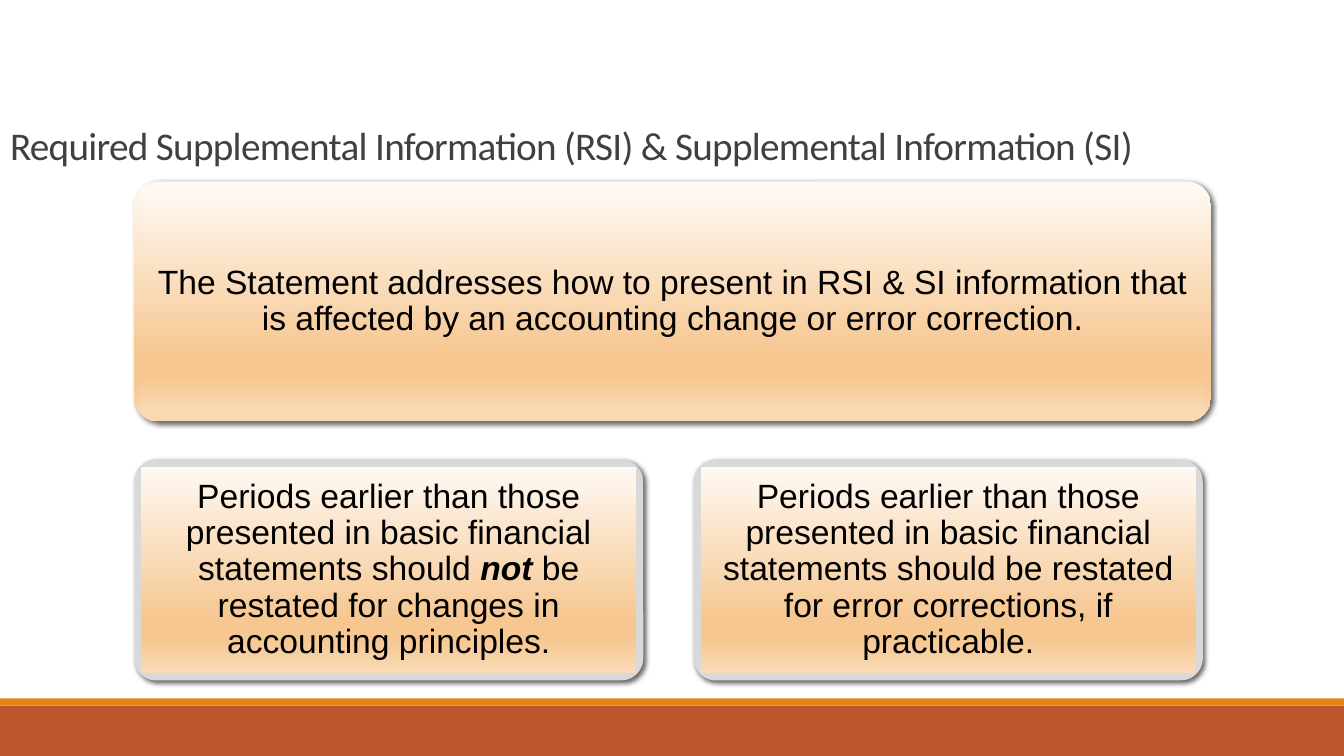
from pptx import Presentation
from pptx.dml.color import RGBColor
from pptx.enum.shapes import MSO_SHAPE
from pptx.enum.text import MSO_ANCHOR, MSO_AUTO_SIZE, PP_ALIGN
from pptx.oxml import parse_xml
from pptx.oxml.ns import nsdecls
from pptx.util import Inches, Pt

TITLE = "Required Supplemental Information (RSI) & Supplemental Information (SI)"
LEAD = [("The Statement addresses how to present in RSI & SI information "
         "that is affected by an accounting change or error correction.", False)]
RULES = [
    [("Periods earlier than those presented in basic financial statements should ", False),
     ("not ", True),
     ("be restated for changes in accounting principles.", False)],
    [("Periods earlier than those presented in basic financial statements "
      "should be restated for error corrections, if practicable.", False)],
]

WHITE = RGBColor(0xFF, 0xFF, 0xFF)
BLACK = RGBColor(0, 0, 0)
SLATE = RGBColor(0x40, 0x40, 0x40)
GREY = RGBColor(0xD9, 0xD9, 0xD9)
RUST = RGBColor(0xBD, 0x58, 0x2C)
AMBER = RGBColor(0xE4, 0x83, 0x12)
CREAM = RGBColor(0xFE, 0xF9, 0xF3)
PEACH = RGBColor(0xF6, 0xC7, 0x91)
SAND = RGBColor(0xF9, 0xDA, 0xB6)
GLOW = [(0, CREAM), (74, PEACH), (83, PEACH), (100, SAND)]

WIDTH, HEIGHT = 13.33, 7.5
FOOT, STRIPE = 0.5, 0.07
LEFT, RIM = 1.33, 0.07
LEAD_TOP, LEAD_W, LEAD_H = 1.8, 10.68, 2.38
RULE_TOP, RULE_W, RULE_H, RULE_STEP = 4.56, 5.05, 2.19, 5.55


def paint(fill, tint):
    """Fill with one colour, or from top to bottom with a list of stops."""
    if isinstance(tint, RGBColor):
        fill.solid()
        fill.fore_color.rgb = tint
        return
    fill.gradient()
    fill.gradient_angle = 270
    stops = fill._xPr.find(".//{*}gsLst")
    for stop in list(stops):
        stops.remove(stop)
    for share, color in tint:
        stops.append(parse_xml(
            f'<a:gs {nsdecls("a")} pos="{share * 1000}">'
            f'<a:srgbClr val="{color}"/></a:gs>'))


def block(shapes, kind, x, y, w, h, tint):
    shape = shapes.add_shape(kind, Inches(x), Inches(y), Inches(w), Inches(h))
    paint(shape.fill, tint)
    shape.line.fill.background()
    shape.shadow.inherit = False
    return shape


def cast(shape):
    """Drop a soft shadow to the lower right."""
    shape._element.spPr.find("{*}effectLst").append(parse_xml(
        f'<a:outerShdw {nsdecls("a")} blurRad="{Pt(3.5)}" dist="{Pt(2)}" '
        'dir="2700000" algn="tl" rotWithShape="0"><a:srgbClr val="000000">'
        '<a:alpha val="60000"/></a:srgbClr></a:outerShdw>'))


def card(slide, x, y, w, h, rim, parts):
    shapes = slide.shapes.add_group_shape().shapes
    frame = block(shapes, MSO_SHAPE.ROUNDED_RECTANGLE, x, y, w, h, rim)
    frame.adjustments[0] = 0.1
    cast(frame)
    face = block(shapes, MSO_SHAPE.RECTANGLE, x + RIM, y + RIM,
                 w - 2 * RIM, h - 2 * RIM, GLOW)
    text = face.text_frame
    text.word_wrap = True
    text.vertical_anchor = MSO_ANCHOR.MIDDLE
    text.margin_left = text.margin_right = Inches(0.1)
    text.margin_top = text.margin_bottom = Inches(0.1)
    para = text.paragraphs[0]
    para.alignment = PP_ALIGN.CENTER
    para.line_spacing = 0.9
    for words, strong in parts:
        run = para.add_run()
        run.text = words
        font = run.font
        font.name, font.size = "Arial", Pt(24)
        font.bold = font.italic = strong
        font.color.rgb = BLACK


def head(slide):
    title = slide.shapes.title
    title.left = title.top = 0
    title.width, title.height = Inches(12.29), Inches(1.72)
    text = title.text_frame
    text.text = TITLE
    text.word_wrap = True
    text.auto_size = MSO_AUTO_SIZE.NONE
    text.vertical_anchor = MSO_ANCHOR.BOTTOM
    para = text.paragraphs[0]
    para.alignment = PP_ALIGN.LEFT
    para.line_spacing = 0.85
    run = para.runs[0]
    run.font.name, run.font.size = "Calibri", Pt(28)
    run.font.color.rgb = SLATE
    run.font._element.set("spc", "-50")


def main():
    deck = Presentation()
    deck.slide_width, deck.slide_height = Inches(WIDTH), Inches(HEIGHT)
    slide = deck.slides.add_slide(deck.slide_layouts[5])
    paint(slide.background.fill, WHITE)
    head(slide)
    base = HEIGHT - FOOT
    block(slide.shapes, MSO_SHAPE.RECTANGLE, 0, base, WIDTH, FOOT, RUST)
    block(slide.shapes, MSO_SHAPE.RECTANGLE, 0, base - STRIPE, WIDTH, STRIPE, AMBER)
    card(slide, LEFT, LEAD_TOP, LEAD_W, LEAD_H, GLOW, LEAD)
    for col, parts in enumerate(RULES):
        card(slide, LEFT + col * RULE_STEP, RULE_TOP, RULE_W, RULE_H, GREY, parts)
    deck.save("out.pptx")


if __name__ == "__main__":
    main()
